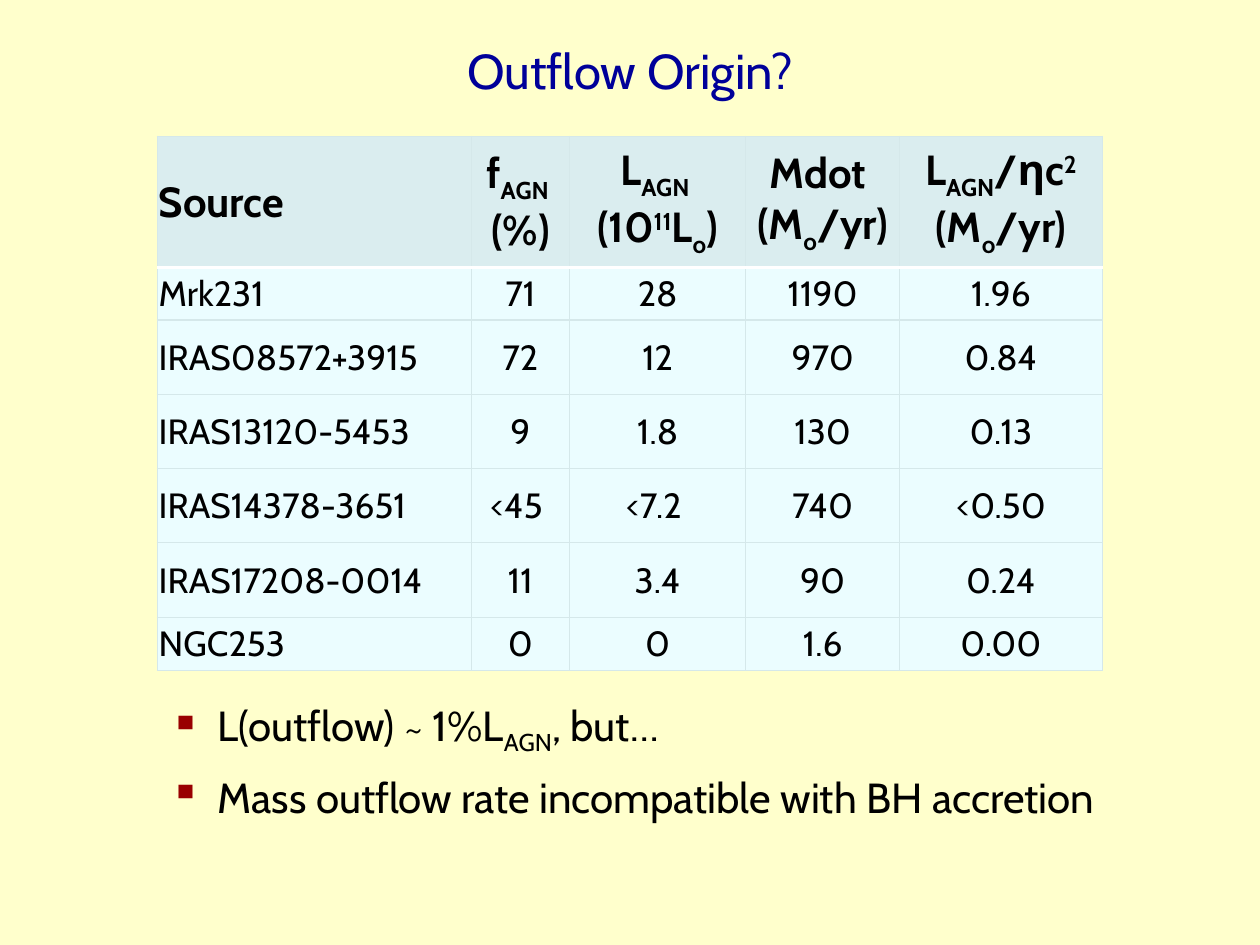
"""Build the outflow origin slide with its source table and two conclusions."""
from dataclasses import dataclass
from typing import NamedTuple

import pptx
import pptx.dml.color
import pptx.enum.text
import pptx.oxml
import pptx.oxml.ns
import pptx.util

Inches = pptx.util.Inches
Align = pptx.enum.text.PP_ALIGN
Anchor = pptx.enum.text.MSO_ANCHOR


@dataclass(frozen=True)
class Theme:
    font: str = "Cabin"
    page: str = "FFFFCC"
    title: str = "000099"
    text: str = "000000"
    bullet: str = "990000"
    header: str = "DAEDEF"
    body: str = "EBFDFF"
    grid: str = "D5E8EA"
    rule: str = "FFFFFF"
    title_size: int = 28
    large_size: int = 24
    cell_size: int = 20


class Span(NamedTuple):
    text: str
    shift: int = 0


class Border(NamedTuple):
    color: str
    points: float


THEME = Theme()
GRID = Border(THEME.grid, 0.75)
RULE = Border(THEME.rule, 2)
SUB, SUPER = -25, 30
AGN = Span("AGN", SUB)
SOLAR = Span("o", SUB)

COLUMNS = (2.49, 0.78, 1.4, 1.22, 1.61)
ROWS = (1.04, 0.42, 0.59, 0.59, 0.59, 0.59, 0.42)
HEADER = (
    [Span("Source")],
    [Span("f"), Span("AGN \n", SUB), Span("(%)")],
    [Span("L"), Span("AGN \n", SUB), Span("(10"), Span("11", SUPER),
     Span("L"), SOLAR, Span(")")],
    [Span("Mdot \n(M"), SOLAR, Span("/yr)")],
    [Span("L"), AGN, Span("/ηc"), Span("2\n", SUPER),
     Span("(M"), SOLAR, Span("/yr)")],
)
SOURCES = (
    ("Mrk231", "71", "28", "1190", "1.96"),
    ("IRAS08572+3915", "72", "12", "970", "0.84"),
    ("IRAS13120-5453", "9", "1.8", "130", "0.13"),
    ("IRAS14378-3651", "<45 ", "<7.2 ", "740", "<0.50"),
    ("IRAS17208-0014", "11", "3.4", "90", "0.24"),
    ("NGC253", "0", "0", "1.6", "0.00"),
)
CONCLUSIONS = (
    [Span("L(outflow) ~ 1%L"), AGN, Span(", but…")],
    [Span("Mass outflow rate incompatible with BH accretion")],
)


def rgb(color: str) -> pptx.dml.color.RGBColor:
    """Return the colour object for a hex string."""
    return pptx.dml.color.RGBColor.from_string(color)


def element(markup: str):
    """Parse one DrawingML element, adding its namespace."""
    name, rest = markup.split(" ", 1)
    return pptx.oxml.parse_xml(f'{name} {pptx.oxml.ns.nsdecls("a")} {rest}')


def write_text(para, spans: list[Span], *, size: float, color: str = THEME.text,
               bold: bool = False, align=Align.LEFT) -> None:
    """Write formatted spans into a paragraph, breaking lines at newlines."""
    para.alignment = align
    for span in spans:
        for index, line in enumerate(span.text.split("\n")):
            if index:
                para.add_line_break()
            if not line:
                continue
            run = para.add_run()
            run.text = line
            run.font.name = THEME.font
            run.font.size = pptx.util.Pt(size)
            run.font.bold = bold
            run.font.color.rgb = rgb(color)
            if span.shift:
                run.font._element.set("baseline", str(span.shift * 1000))


def format_cell(cell, fill: str, top: Border, bottom: Border) -> None:
    """Set the margins, borders and fill of a table cell."""
    cell.vertical_anchor = Anchor.MIDDLE
    cell.margin_left = cell.margin_right = cell.margin_top = Inches(0.01)
    cell.margin_bottom = 0
    properties = cell._tc.get_or_add_tcPr()
    for side, border in zip("LRTB", (GRID, GRID, top, bottom)):
        width = pptx.util.Pt(border.points)
        properties.append(element(
            f'<a:ln{side} w="{width}"><a:solidFill><a:srgbClr val="{border.color}"/>'
            f'</a:solidFill></a:ln{side}>'.replace('">', '" >', 1)))
    cell.fill.solid()
    cell.fill.fore_color.rgb = rgb(fill)


def add_source_table(page) -> None:
    """Add the table of sources."""
    table = page.shapes.add_table(
        len(ROWS), len(COLUMNS), Inches(1.25), Inches(1.08),
        Inches(sum(COLUMNS)), Inches(sum(ROWS))).table
    table.horz_banding = False
    for column, width in zip(table.columns, COLUMNS):
        column.width = Inches(width)
    for row, height in zip(table.rows, ROWS):
        row.height = Inches(height)
    body = [[[Span(value)] for value in source] for source in SOURCES]
    for r, contents in enumerate([HEADER, *body]):
        heading = r == 0
        for c, spans in enumerate(contents):
            cell = table.cell(r, c)
            format_cell(cell, THEME.header if heading else THEME.body,
                        top=RULE if r == 1 else GRID,
                        bottom=RULE if heading else GRID)
            write_text(cell.text_frame.paragraphs[0], spans, bold=heading,
                       size=THEME.large_size if heading else THEME.cell_size,
                       align=Align.CENTER if c else Align.LEFT)


def add_title(page, text: str) -> None:
    """Place and fill the title placeholder."""
    box = page.shapes.title
    box.left, box.top = Inches(0.5), Inches(0.08)
    box.width, box.height = Inches(9), Inches(0.95)
    box.text_frame.vertical_anchor = Anchor.MIDDLE
    write_text(box.text_frame.paragraphs[0], [Span(text)], size=THEME.title_size,
               color=THEME.title, align=Align.CENTER)


def add_conclusions(page) -> None:
    """Add the bulleted conclusions."""
    box = page.shapes.add_textbox(Inches(1.25), Inches(5.5), Inches(8.25), Inches(1.08))
    frame = box.text_frame
    frame.word_wrap = True
    for index, spans in enumerate(CONCLUSIONS):
        para = frame.add_paragraph() if index else frame.paragraphs[0]
        write_text(para, spans, size=THEME.large_size)
        para.space_before = pptx.util.Pt(0.35 * THEME.large_size)
        properties = para._p.get_or_add_pPr()
        properties.set("marL", str(Inches(0.38)))
        properties.set("indent", str(-Inches(0.38)))
        properties.append(element(
            f'<a:buClr ><a:srgbClr val="{THEME.bullet}"/></a:buClr>'))
        properties.append(element('<a:buChar char="▪"/>'))


def main() -> None:
    """Build and save the deck."""
    deck = pptx.Presentation()
    deck.slide_width, deck.slide_height = Inches(10), Inches(7.5)
    page = deck.slides.add_slide(deck.slide_layouts[5])
    page.background.fill.solid()
    page.background.fill.fore_color.rgb = rgb(THEME.page)
    add_source_table(page)
    add_title(page, "Outflow Origin?")
    add_conclusions(page)
    deck.save("out.pptx")


if __name__ == "__main__":
    main()
